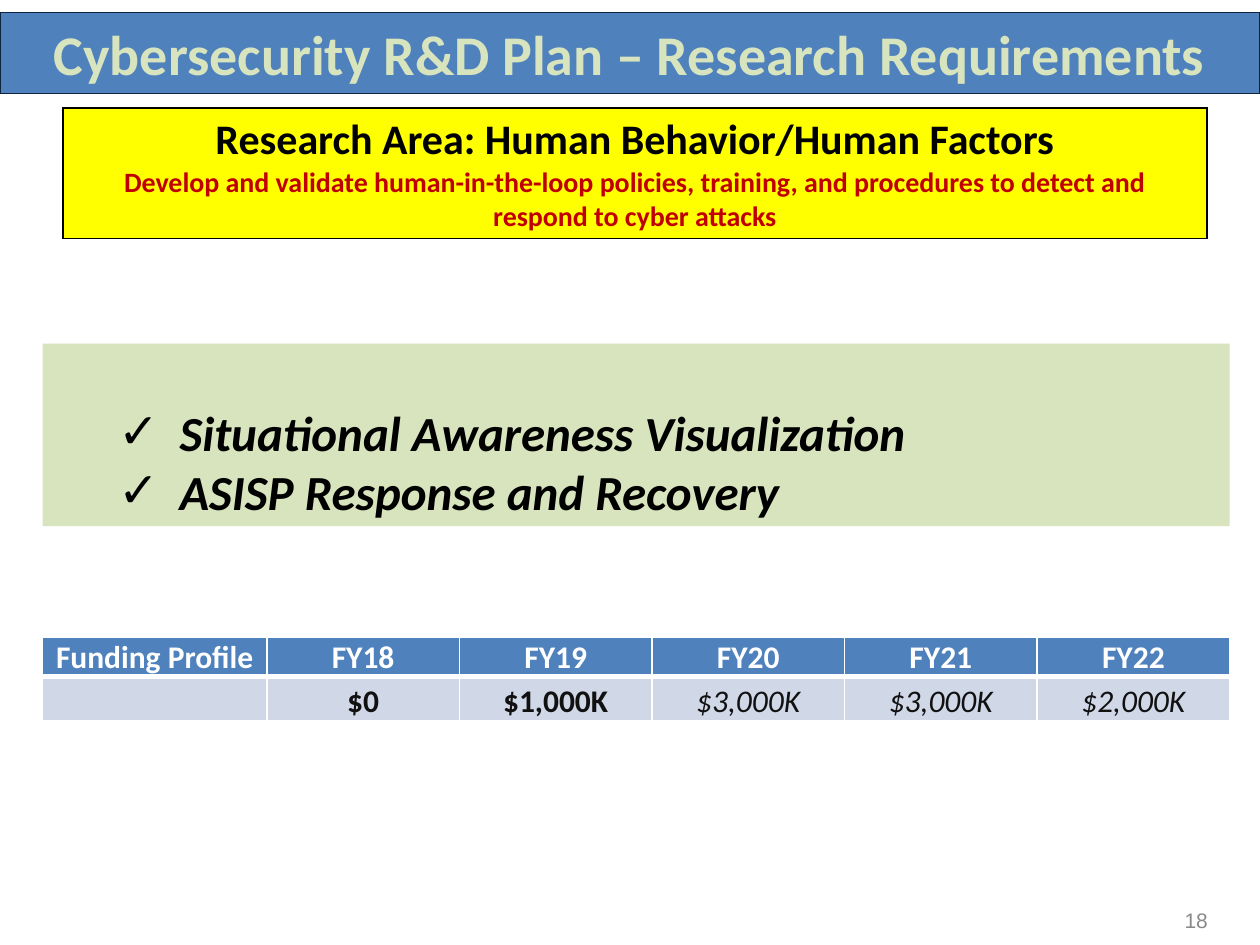
from lxml import etree
from pptx import Presentation
from pptx.dml.color import RGBColor
from pptx.enum import shapes, text
from pptx.oxml import ns
from pptx.util import Cm, Pt

COLORS = {
    "blue": "4F81BD", "navy": "0F243E", "green": "D7E4BD", "yellow": "FFFF00",
    "red": "C00000", "black": "000000", "white": "FFFFFF", "pale": "D0D8E8",
    "ink": "111111", "gray": "898989",
}
FUNDING = [("FY18", "$0"), ("FY19", "$1,000K"), ("FY20", "$3,000K"),
           ("FY21", "$3,000K"), ("FY22", "$2,000K")]


def rgb(name):
    return RGBColor.from_string(COLORS[name])


def write(paragraph, words, size, color, bold=True, italic=False,
          name="Calibri", align=text.PP_ALIGN.CENTER):
    paragraph.text = words
    paragraph.alignment = align
    font = paragraph.font
    font.name, font.size, font.bold, font.italic = name, Pt(size), bold, italic
    font.color.rgb = rgb(color)


def add_box(slide, box, fill, line=None):
    shape = slide.shapes.add_shape(shapes.MSO_SHAPE.RECTANGLE, *map(Cm, box))
    shape.shadow.inherit = False
    shape.fill.solid()
    shape.fill.fore_color.rgb = rgb(fill)
    if line:
        shape.line.color.rgb = rgb(line)
        shape.line.width = Pt(0.75)
    else:
        shape.line.fill.background()
    shape.text_frame.word_wrap = True
    return shape


def style_cell(cell, fill, border, margins, bottom_width=1):
    cell.fill.solid()
    cell.fill.fore_color.rgb = rgb(fill)
    cell.margin_left = cell.margin_right = Cm(margins[0])
    cell.margin_top, cell.margin_bottom = Cm(margins[1]), Cm(margins[2])
    properties = cell._tc.get_or_add_tcPr()
    for index, side in enumerate("LRTB"):
        width = bottom_width if side == "B" else 1
        line = etree.Element(ns.qn(f"a:ln{side}"), w=str(Pt(width)))
        solid = etree.SubElement(line, ns.qn("a:solidFill"))
        etree.SubElement(solid, ns.qn("a:srgbClr"), val=COLORS[border])
        properties.insert(index, line)


def add_bullet(paragraph, indent, hanging):
    properties = paragraph._p.get_or_add_pPr()
    properties.set("marL", str(Cm(indent)))
    properties.set("indent", str(-Cm(hanging)))
    etree.SubElement(properties, ns.qn("a:buFont"), typeface="Arial")
    etree.SubElement(properties, ns.qn("a:buChar"), char="✓")


def add_title(slide, box):
    frame = add_box(slide, box, "blue", "navy").text_frame
    write(frame.paragraphs[0], "Cybersecurity R&D Plan – Research Requirements", 32, "green")


def add_research_area(slide, box):
    table = slide.shapes.add_table(1, 1, *map(Cm, box)).table
    cell = table.cell(0, 0)
    style_cell(cell, "yellow", "black", (0.25, 0.13, 0.13))
    write(cell.text_frame.paragraphs[0], "Research Area: Human Behavior/Human Factors", 24, "black")
    write(cell.text_frame.add_paragraph(),
          "Develop and validate human-in-the-loop policies, training, and procedures "
          "to detect and respond to cyber attacks", 16, "red")


def add_requirements(slide, box):
    frame = add_box(slide, box, "green").text_frame
    frame.vertical_anchor = text.MSO_ANCHOR.BOTTOM
    items = ["Situational Awareness Visualization", "ASISP Response and Recovery"]
    for index, item in enumerate(items):
        paragraph = frame.add_paragraph() if index else frame.paragraphs[0]
        paragraph.level = 1
        add_bullet(paragraph, 2.51, 1.24)
        write(paragraph, item, 28, "black", italic=True, align=text.PP_ALIGN.LEFT)


def add_funding(slide, box, label_width=4.52, header_height=0.79):
    left, top, width, height = box
    table = slide.shapes.add_table(2, len(FUNDING) + 1, *map(Cm, box)).table
    table.rows[0].height = Cm(header_height)
    table.rows[1].height = Cm(height - header_height)
    year_width = (width - label_width) / len(FUNDING)
    for index, (year, amount) in enumerate([("Funding Profile", "")] + FUNDING):
        table.columns[index].width = Cm(year_width if index else label_width)
        header, value = table.cell(0, index), table.cell(1, index)
        style_cell(header, "blue", "white", (0.03, 0.03, 0), bottom_width=3)
        header.vertical_anchor = text.MSO_ANCHOR.MIDDLE
        write(header.text_frame.paragraphs[0], year, 18, "white")
        style_cell(value, "pale", "white", (0.18, 0, 0))
        if amount:
            paragraph = value.text_frame.paragraphs[0]
            paragraph.line_spacing = 1.15
            planned = index > 2
            write(paragraph, amount, 18, "ink", bold=not planned, italic=planned)


def add_page_number(slide, box):
    frame = slide.shapes.add_textbox(*map(Cm, box)).text_frame
    frame.word_wrap = True
    frame.vertical_anchor = text.MSO_ANCHOR.MIDDLE
    write(frame.paragraphs[0], "18", 12, "gray", bold=False, name="Arial")


def main():
    presentation = Presentation()
    presentation.slide_width, presentation.slide_height = Cm(25.4), Cm(19.05)
    slide = presentation.slides.add_slide(presentation.slide_layouts[6])
    add_page_number(slide, (22.63, 18.03, 2.97, 1.02))
    add_title(slide, (0, 0.25, 25.4, 1.63))
    add_research_area(slide, (1.27, 2.18, 23.06, 2.62))
    add_funding(slide, (0.86, 12.85, 23.93, 1.65))
    add_requirements(slide, (0.86, 6.93, 23.93, 3.68))
    presentation.save("out.pptx")


if __name__ == "__main__":
    main()
